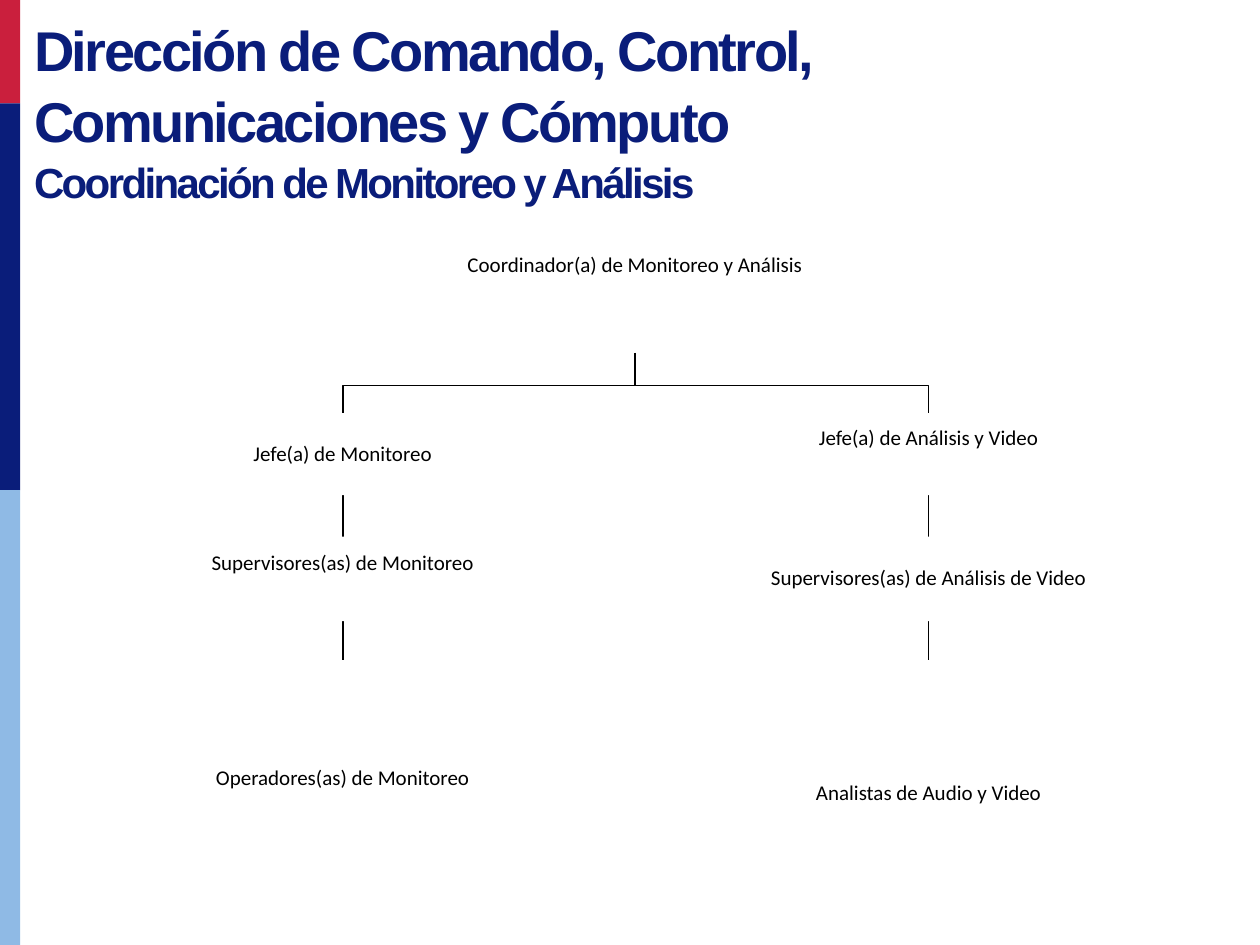
from pptx import Presentation
from pptx.dml.color import RGBColor as RGB
from pptx.enum.shapes import MSO_CONNECTOR as Conn, MSO_SHAPE as Kind
from pptx.enum.text import MSO_ANCHOR as Anchor, MSO_AUTO_SIZE as Auto, PP_ALIGN as Align
from pptx.oxml.ns import qn
from pptx.util import Inches, Pt

COLORS = {"red": "CA1F3D", "navy": "0A1D7A", "sky": "8FBAE5", "white": "FFFFFF", "black": "000000"}
WIDE, HIGH = 10, 7.5
BARS = [("red", 0.82), ("navy", 3.07), ("sky", 3.61)]
BAR = 0.16
TITLE = [
    ("Dirección de Comando, Control, Comunicaciones y Cómputo", 32),
    ("Coordinación de Monitoreo y Análisis", 24),
]
# Rows below the head: top, height, width
ROWS = [(3.28, 0.65, 3.26), (4.26, 0.67, 3.26), (5.24, 2.12, 4.21)]
HEAD = ("Coordinador(a) de Monitoreo y Análisis", True)
HEAD_ROW = (1.65, 1.15, 3.06)
MID, BEND = 5.04, 3.06
# Column centre, then the label of each row and whether it sits half a line higher
TEAMS = [
    (2.72, [("Jefe(a) de Monitoreo", False),
            ("Supervisores(as) de Monitoreo", True),
            ("Operadores(as) de Monitoreo", True)]),
    (7.37, [("Jefe(a) de Análisis y Video", True),
            ("Supervisores(as) de Análisis de Video", False),
            ("Analistas de Audio y Video", False)]),
]
INSET, LIFT = 0.01, 0.24


def color(name):
    return RGB.from_string(COLORS[name])


def style(font, **form):
    form["color"] = color(form["color"])
    font.color.rgb = form.pop("color")
    for key, value in form.items():
        setattr(font, key, value)


def add_rect(shapes, x, y, w, h, fill):
    rect = shapes.add_shape(Kind.RECTANGLE, *map(Inches, (x, y, w, h)))
    rect.shadow.inherit = False
    rect.fill.solid()
    rect.fill.fore_color.rgb = color(fill)
    rect.line.fill.background()
    return rect


def add_box(shapes, mid, row, label):
    top, high, wide = row
    text, raised = label
    frame = add_rect(shapes, mid - wide / 2, top, wide, high, "white").text_frame
    frame.word_wrap = True
    frame.vertical_anchor = Anchor.MIDDLE
    for side in ("left", "top", "right", "bottom"):
        setattr(frame, f"margin_{side}", Inches(INSET))
    if raised:
        frame.margin_bottom = Inches(INSET + LIFT)
    para = frame.paragraphs[0]
    para.text = text
    para.alignment = Align.CENTER
    para.line_spacing = 0.9
    style(para.runs[0].font, name="Calibri", size=Pt(12), color="black")


def ink(line):
    line.color.rgb = color("black")
    line.width = Pt(1)


def add_branch(shapes, mid):
    """Draw the bent line from the head to the first box of a team."""
    start = HEAD_ROW[0] + HEAD_ROW[1]
    pen = shapes.build_freeform(Inches(MID), Inches(start))
    points = [(MID, BEND), (mid, BEND), (mid, ROWS[0][0])]
    pen.add_line_segments([(Inches(x), Inches(y)) for x, y in points], close=False)
    bent = pen.convert_to_shape()
    bent.shadow.inherit = False
    bent.fill.background()
    ink(bent.line)


def add_stem(shapes, mid, upper, lower):
    ends = (mid, upper[0] + upper[1], mid, lower[0])
    stem = shapes.add_connector(Conn.STRAIGHT, *map(Inches, ends))
    props = stem.line._get_or_add_ln().getparent()
    ink(stem.line)
    props.append(props.makeelement(qn("a:effectLst"), {}))


def add_title(title):
    title.left, title.top, title.width, title.height = map(Inches, (0.17, 0.05, 7.46, 1.58))
    frame = title.text_frame
    frame.word_wrap = True
    frame.auto_size = Auto.NONE
    frame.vertical_anchor = Anchor.TOP
    frame.text = "\n".join(text for text, _ in TITLE)
    for para, (_, size) in zip(frame.paragraphs, TITLE):
        para.alignment = Align.LEFT
        para.line_spacing = 1.05
        font = para.runs[0].font
        style(font, name="Arial", size=Pt(size), bold=True, color="navy")
        para.runs[0]._r.get_or_add_rPr().set("spc", "-150")


def main():
    deck = Presentation()
    deck.slide_width, deck.slide_height = Inches(WIDE), Inches(HIGH)
    slide = deck.slides.add_slide(deck.slide_layouts[5])
    shapes = slide.shapes
    add_title(shapes.title)
    top = 0
    for fill, high in BARS:
        add_rect(shapes, 0, top, BAR, high, fill)
        top += high
    add_box(shapes, MID, HEAD_ROW, HEAD)
    for mid, labels in TEAMS:
        add_branch(shapes, mid)
        for upper, lower in zip(ROWS, ROWS[1:]):
            add_stem(shapes, mid, upper, lower)
        for row, label in zip(ROWS, labels):
            add_box(shapes, mid, row, label)
    deck.save("out.pptx")


if __name__ == "__main__":
    main()
